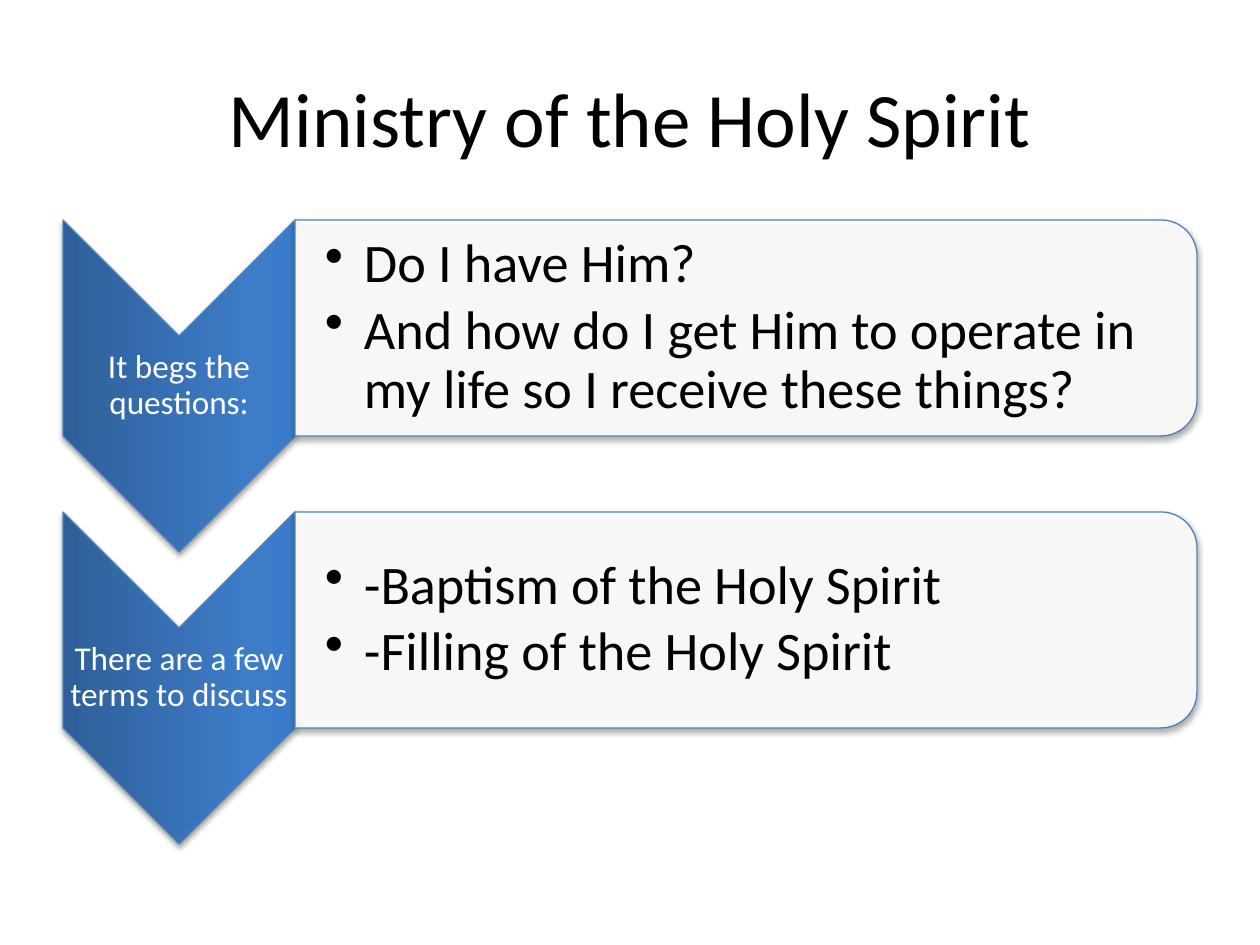
from pptx import Presentation
from pptx.dml.color import RGBColor
from pptx.enum.shapes import MSO_SHAPE
from pptx.enum.text import MSO_ANCHOR, PP_ALIGN
from pptx.oxml import parse_xml
from pptx.oxml.ns import nsdecls
from pptx.util import Pt
from lxml.etree import SubElement

UNIT = 914400 / 126
HUES = {"ink": "000000", "white": "FFFFFF", "edge": "4F81BD",
        "deep": "2F5F99", "mid": "3D7CC7", "light": "3A7CCB"}
ROWS = [
    ("It begs the questions:",
     ["Do I have Him?",
      "And how do I get Him to operate in my life so I receive these things?"]),
    ("There are a few terms to discuss",
     ["-Baptism of the Holy Spirit", "-Filling of the Holy Spirit"]),
]


def px(num):
    return round(num * UNIT)


def tint(name):
    return RGBColor.from_string(HUES[name])


def apply(item, form):
    for key, val in form.items():
        setattr(item, key, val)


def write(slide, box, lines, size, hue, pads, form, dot=False):
    frame = slide.shapes.add_textbox(*map(px, box)).text_frame
    sides = ("margin_left", "margin_top", "margin_right", "margin_bottom")
    apply(frame, {"word_wrap": True, "vertical_anchor": MSO_ANCHOR.MIDDLE,
                  **dict(zip(sides, map(px, pads)))})
    for num, line in enumerate(lines):
        para = frame.add_paragraph() if num else frame.paragraphs[0]
        apply(para, form)
        run = para.add_run()
        run.text = line
        apply(run.font, {"size": Pt(size), "name": "Calibri"})
        run.font.color.rgb = tint(hue)
        if dot:
            prop = para._p.get_or_add_pPr()
            prop.set("marL", str(px(39)))
            prop.set("indent", str(px(-39)))
            prop.append(parse_xml(f'<a:buChar {nsdecls("a")} char="•"/>'))


def turned(slide, kind, box):
    left, top, wide, high = box
    shift = (wide - high) / 2
    shape = slide.shapes.add_shape(
        kind, px(left + shift), px(top - shift), px(high), px(wide))
    shape.rotation = 90
    shape.line.color.rgb = tint("edge")
    shape.line.width = Pt(0.75)
    return shape


def shade(shape):
    shape._element.spPr.append(parse_xml(
        f'<a:effectLst {nsdecls("a")}><a:outerShdw blurRad="40000" '
        'dist="23000" dir="5400000" rotWithShape="0">'
        f'<a:srgbClr val="{HUES["ink"]}"><a:alpha val="35000"/></a:srgbClr>'
        '</a:outerShdw></a:effectLst>'))


def arrow(slide, box, label):
    left, top, wide, high = box
    shape = turned(slide, MSO_SHAPE.CHEVRON, box)
    shape.fill.gradient()
    shape.fill.gradient_angle = 90
    grad = shape._element.spPr.find(".//{*}gsLst")
    for stop in list(grad):
        grad.remove(stop)
    for pos, hue in ((0, "deep"), (80, "mid"), (100, "light")):
        grad.append(parse_xml(
            f'<a:gs {nsdecls("a")} pos="{pos * 1000}">'
            f'<a:srgbClr val="{HUES[hue]}"/></a:gs>'))
    shade(shape)
    half = wide // 2
    write(slide, (left, top + half, wide, high - wide), [label], 19, "white",
          (1, 1, 1, 1), {"alignment": PP_ALIGN.CENTER, "line_spacing": 0.9})


def panel(slide, box, lines):
    left, top, wide, high = box
    shape = turned(slide, MSO_SHAPE.ROUND_2_SAME_RECTANGLE, box)
    shape.fill.solid()
    shape.fill.fore_color.rgb = tint("white")
    hue = shape._element.spPr.find("{*}solidFill/{*}srgbClr")
    SubElement(hue, hue.tag.replace("srgbClr", "alpha"), val="90000")
    shade(shape)
    write(slide, (left, top + 11, wide - 10, high - 22), lines, 31, "ink",
          (30, 2, 2, 2), {"line_spacing": 0.9, "space_after": Pt(4.65)}, True)


def band(slide, box, label, lines):
    left, top, wide, high = box
    side = 232
    arrow(slide, (left, top, side, high), label)
    panel(slide, (left + side, top, wide - side, high - side // 2), lines)


def main():
    deck = Presentation()
    apply(deck, {"slide_width": px(1260), "slide_height": px(945)})
    slide = deck.slides.add_slide(deck.slide_layouts[6])
    write(slide, (63, 38, 1134, 158), ["Ministry of the Holy Spirit"], 44,
          "ink", (13, 6, 13, 6), {"alignment": PP_ALIGN.CENTER})
    for num, (label, lines) in enumerate(ROWS):
        band(slide, (63, 220 + 292 * num, 1134, 332), label, lines)
    deck.save("out.pptx")


if __name__ == "__main__":
    main()
